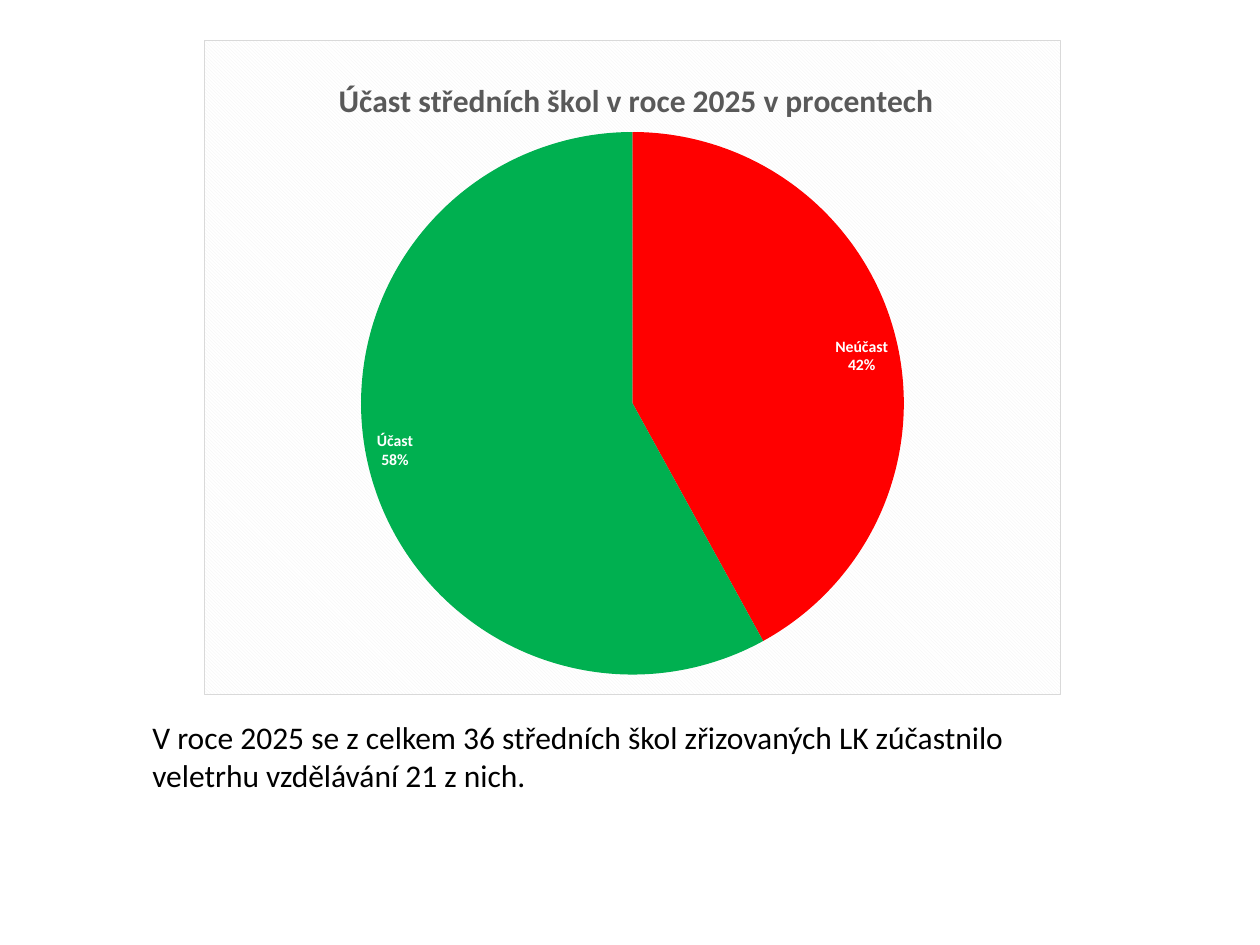
from lxml.etree import SubElement
from pptx import Presentation
from pptx.chart.data import CategoryChartData
from pptx.dml.color import RGBColor
from pptx.enum.chart import XL_CHART_TYPE, XL_LABEL_POSITION
from pptx.oxml import parse_xml
from pptx.oxml.ns import nsdecls, qn
from pptx.util import Pt

THEME = {
    "font": "Calibri",
    "text": RGBColor.from_string("000000"),
    "title": RGBColor.from_string("595959"),
    "label": RGBColor.from_string("FFFFFF"),
    "slices": {"Neúčast": (42, "FF0000"), "Účast": (58, "00B050")},
    "pattern": ("F2F2F2", "FFFFFF"),
    "border": "D9D9D9",
    "body_size": Pt(18),
    "title_size": Pt(18),
    "chart_size": Pt(10),
    "label_size": Pt(9),
}
EMU_PER_PX = 914400 / 126


def box(*lengths):
    return [round(length * EMU_PER_PX) for length in lengths]


def place(element, position, inner=False, **fractions):
    """Give a chart part a fixed place, in fractions of the chart."""
    for layout in element.findall(qn("c:layout")):
        element.remove(layout)
    layout = parse_xml(f"<c:layout {nsdecls('c')}><c:manualLayout/></c:layout>")
    settings = {"layoutTarget": "inner"} if inner else {}
    settings.update(xMode="edge", yMode="edge", **fractions)
    for name, value in settings.items():
        SubElement(layout[0], qn(f"c:{name}")).set("val", str(value))
    element.insert(position, layout)


presentation = Presentation()
presentation.slide_width, presentation.slide_height = box(1260, 945)
slide = presentation.slides.add_slide(presentation.slide_layouts[6])

# Sentence under the chart
text_box = slide.shapes.add_textbox(*box(140, 712, 985, 89))
text_box.text_frame.word_wrap = True
paragraph = text_box.text_frame.paragraphs[0]
paragraph.text = (
    "V roce 2025 se z celkem 36 středních škol zřizovaných LK "
    "zúčastnilo veletrhu vzdělávání 21 z nich."
)

# Pie chart
chart_data = CategoryChartData()
chart_data.categories = list(THEME["slices"])
chart_data.add_series("Series 1", [value for value, _ in THEME["slices"].values()])
chart = slide.shapes.add_chart(
    XL_CHART_TYPE.PIE, *box(204, 40, 857, 655), chart_data
).chart
chart.has_legend = False
plot = chart.plots[0]
plot.vary_by_categories = True
for index, (_, color) in enumerate(THEME["slices"].values()):
    point_format = plot.series[0].points[index].format
    point_format.fill.solid()
    point_format.fill.fore_color.rgb = RGBColor.from_string(color)
    point_format.line.fill.background()

# Slice labels
labels = plot.series[0].data_labels
label_settings = {
    "show_category_name": True,
    "show_percentage": True,
    "show_value": False,
    "show_legend_key": False,
    "position": XL_LABEL_POSITION.INSIDE_END,
}
for name, value in label_settings.items():
    setattr(labels, name, value)
separator = parse_xml(f"<c:separator {nsdecls('c')}>\n</c:separator>")
labels._element.find(qn("c:showBubbleSize")).addnext(separator)

# Chart title
chart.has_title = True
title = chart.chart_title
title.include_in_layout = False
title_paragraph = title.text_frame.paragraphs[0]
title_run = title_paragraph.add_run()
title_run.text = "Účast středních škol v roce 2025 v procentech"

# Fonts
fonts = [
    (paragraph.runs[0].font, "body_size", "text", False),
    (chart.font, "chart_size", "text", False),
    (labels.font, "label_size", "label", True),
    (title_run.font, "title_size", "title", True),
]
for font, size, color, bold in fonts:
    for name, value in {"name": THEME["font"], "size": THEME[size], "bold": bold}.items():
        setattr(font, name, value)
    font.color.rgb = THEME[color]

# Places of the title and the pie
place(title._element, 1, x=0.15, y=0.05)
plot_area = chart._chartSpace.chart.plotArea
place(plot_area, 0, inner=True, x=0.18, y=0.14, w=0.64, h=0.83)

# Hatched background and thin border
foreground, background = THEME["pattern"]
chart_area = parse_xml(
    f"<c:spPr {nsdecls('c', 'a')}>"
    f'<a:pattFill prst="dkDnDiag"><a:fgClr><a:srgbClr val="{foreground}"/></a:fgClr>'
    f'<a:bgClr><a:srgbClr val="{background}"/></a:bgClr></a:pattFill>'
    f'<a:ln w="{Pt(0.75)}"><a:solidFill><a:srgbClr val="{THEME["border"]}"/></a:solidFill></a:ln>'
    "</c:spPr>"
)
chart._chartSpace.chart.addnext(chart_area)

presentation.save("out.pptx")
